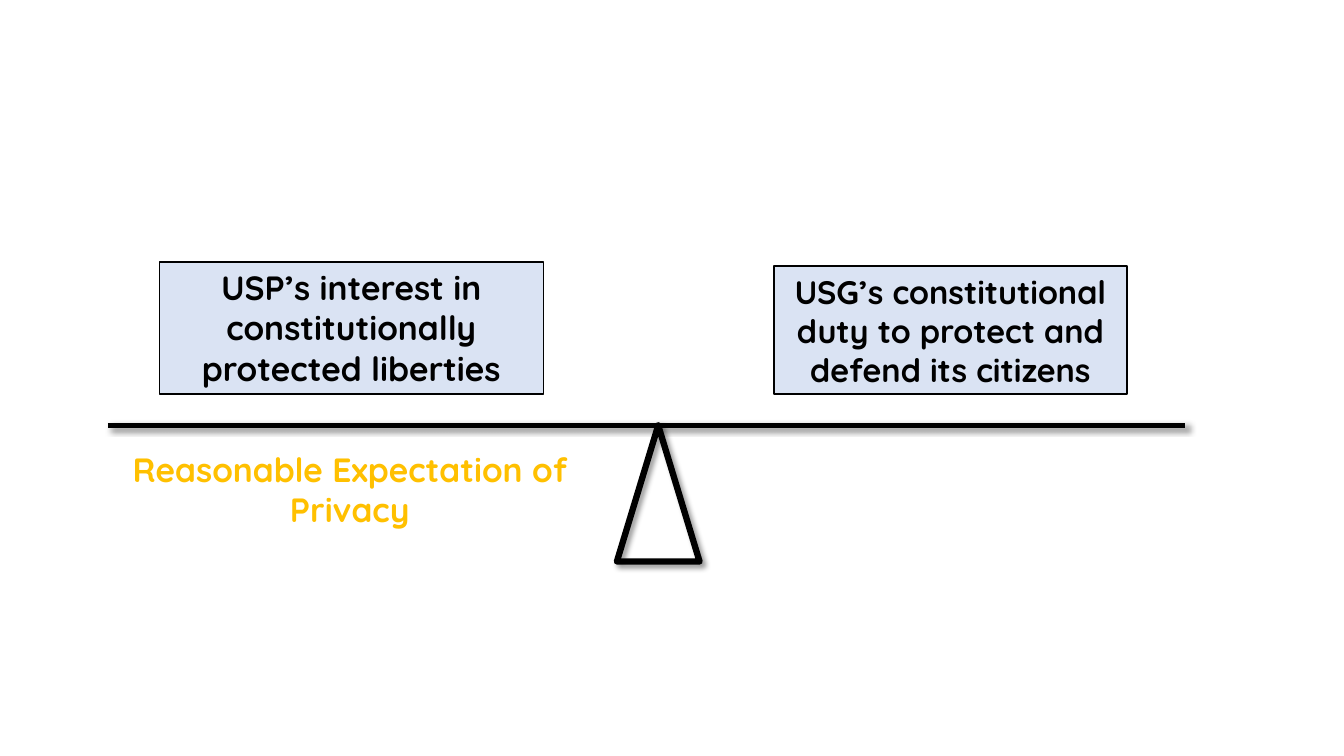
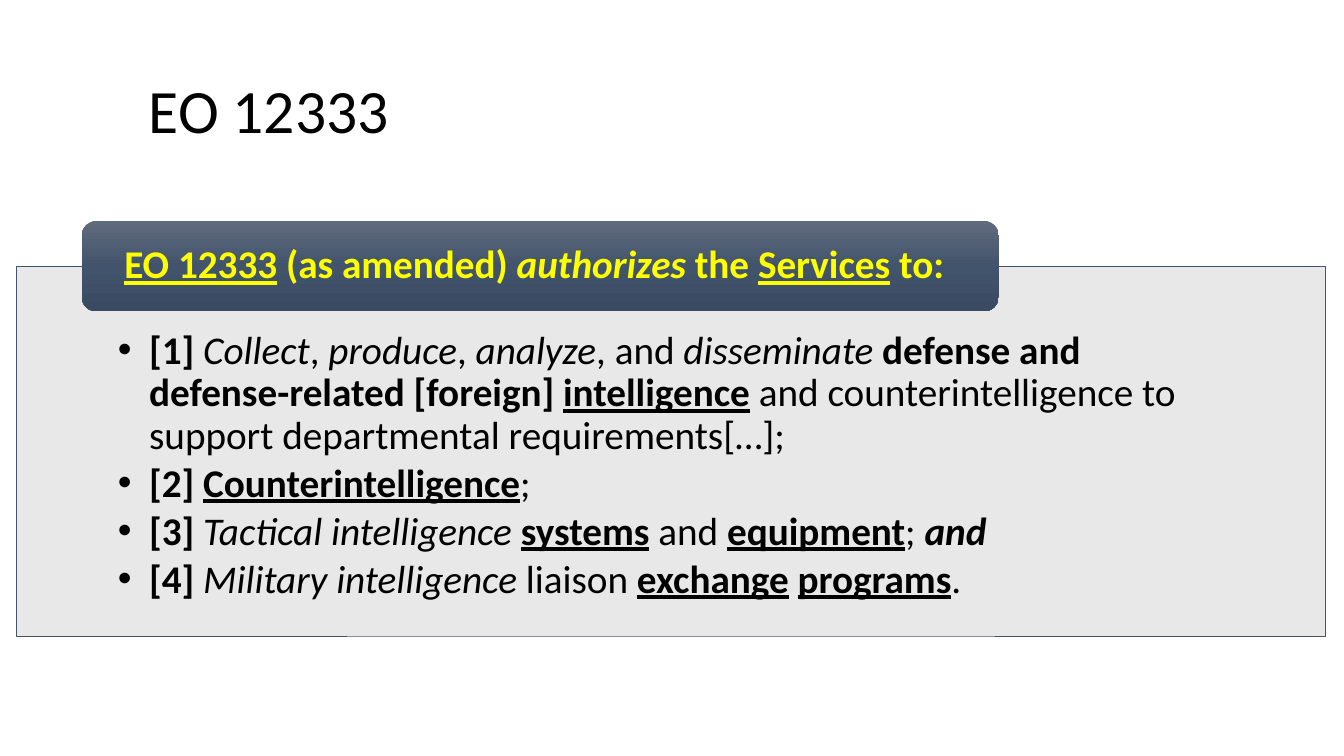
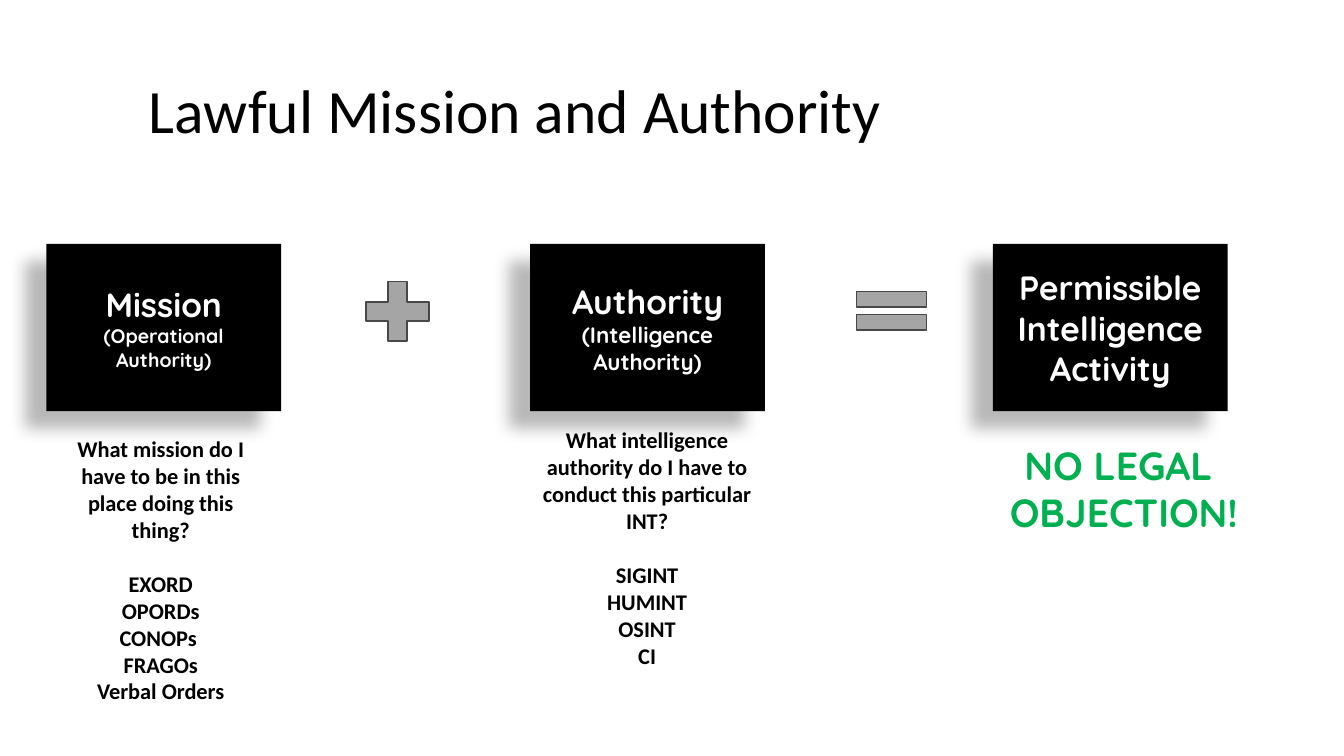
from lxml import etree
from pptx import Presentation
from pptx.dml.color import RGBColor as RGB
from pptx.enum.shapes import MSO_CONNECTOR as CONN, MSO_SHAPE as SHAPE
from pptx.enum.text import MSO_ANCHOR as ANCHOR, PP_ALIGN as ALIGN
from pptx.oxml.ns import qn
from pptx.util import Emu, Pt

PX = 9144
C = {
    "ink": "000000", "paper": "FFFFFF", "pale": "DAE3F3", "gold": "FFC000",
    "panel": "E7E6E6", "slate": "44546A", "yellow": "FFFF00", "green": "00B050",
    "sign": "A5A5A5", "sign_line": "484848",
    "band_top": "606B7D", "band_mid": "42546C", "band_low": "394A62",
}
BODY, DISPLAY = "Calibri", "Quicksand"
SOFT = (40, 4, 3, 45)
DEEP = (28, 11.8, 19.7, 141)


def px(*vals):
    return [Emu(round(v * PX)) for v in vals]


def sub(parent, tag, **attrs):
    return etree.SubElement(parent, qn(tag), {k: str(v) for k, v in attrs.items()})


def set_effects(sp, shadow=None):
    spPr = sp._element.spPr
    for old in spPr.findall(qn("a:effectLst")):
        spPr.remove(old)
    lst = sub(spPr, "a:effectLst")
    if shadow:
        alpha, blur, dist, angle = shadow
        sh = sub(lst, "a:outerShdw", blurRad=int(Pt(blur)), dist=int(Pt(dist)),
                 dir=angle * 60000, algn="ctr", rotWithShape=0)
        clr = sub(sh, "a:srgbClr", val=C["ink"])
        sub(clr, "a:alpha", val=alpha * 1000)


def set_line(line, color, width):
    line.color.rgb = RGB.from_string(C[color])
    line.width = Pt(width)


def add_shape(s, kind, box, fill=None, line=None, shadow=None):
    sp = s.shapes.add_shape(kind, *px(*box))
    if fill:
        sp.fill.solid()
        sp.fill.fore_color.rgb = RGB.from_string(C[fill])
    else:
        sp.fill.background()
    if line:
        set_line(sp.line, *line)
    else:
        sp.line.fill.background()
    sp.shadow.inherit = False
    set_effects(sp, shadow)
    return sp


def set_frame(sp, anchor=ANCHOR.TOP, ins=(10, 5, 10, 5)):
    tf = sp.text_frame
    tf.word_wrap = True
    tf.vertical_anchor = anchor
    tf.margin_left, tf.margin_top, tf.margin_right, tf.margin_bottom = px(*ins)
    return tf


def add_para(tf, runs, size, color="ink", font=BODY, align=ALIGN.CENTER,
             spacing=None, before=0, after=0):
    p = tf.paragraphs[0]
    if p.runs:
        p = tf.add_paragraph()
    p.alignment = align
    p.space_before, p.space_after = Pt(before), Pt(after)
    if spacing:
        p.line_spacing = spacing
    for text, style in runs:
        r = p.add_run()
        r.text = text
        f = r.font
        f.name, f.size = font, Pt(size)
        f.color.rgb = RGB.from_string(C[color])
        f.bold, f.italic, f.underline = ("b" in style, "i" in style, "u" in style)
    return p


def add_text(s, box, anchor=ANCHOR.TOP):
    return set_frame(s.shapes.add_textbox(*px(*box)), anchor)


def add_title(s, text):
    tf = add_text(s, (138, 40, 1060, 145), ANCHOR.MIDDLE)
    add_para(tf, [(text, "")], 44, align=ALIGN.LEFT, spacing=0.9)


def add_bullet(p, indent):
    pPr = p._p.get_or_add_pPr()
    pPr.set("marL", str(indent * PX))
    pPr.set("indent", str(-indent * PX))
    sub(pPr, "a:buFont", typeface="Arial")
    sub(pPr, "a:buChar", char="•")


def add_balance(s, x, y, w):
    beam = s.shapes.add_connector(CONN.STRAIGHT, *px(x, y, x + w, y))
    set_line(beam.line, "ink", 4)
    set_effects(beam, SOFT)
    weights = [
        ((51, -162, 381, 131), "USP’s interest in constitutionally protected liberties",
         24, ANCHOR.TOP),
        ((661, -158, 350, 127), "USG’s constitutional duty to protect and defend its citizens",
         23.2, ANCHOR.MIDDLE),
    ]
    for (dx, dy, bw, bh), text, size, anchor in weights:
        sp = add_shape(s, SHAPE.RECTANGLE, (x + dx, y + dy, bw, bh), "pale", ("ink", 1))
        add_para(set_frame(sp, anchor), [(text, "b")], size, font=DISPLAY)
    add_shape(s, SHAPE.ISOSCELES_TRIANGLE, (x + 505, y, 82, 135),
              line=("ink", 4.5), shadow=SOFT)
    tf = add_text(s, (x + 5, y + 18, 470, 91))
    add_para(tf, [("Reasonable Expectation of Privacy", "b")], 24, "gold", DISPLAY)


def add_panel(s, x, y, w, h, heading, items):
    sp = add_shape(s, SHAPE.RECTANGLE, (x, y, w, h), "panel", ("slate", 0.5))
    clr = sp._element.spPr.find(qn("a:solidFill")).find(qn("a:srgbClr"))
    sub(clr, "a:alpha", val=90000)
    tf = set_frame(sp, ins=(101, 64, 101, 22))
    for runs in items:
        p = add_para(tf, runs, 28, align=ALIGN.LEFT, spacing=0.9, after=4)
        add_bullet(p, 31)

    band = add_shape(s, SHAPE.ROUNDED_RECTANGLE, (x + 65, y - 45, 910, 90), "band_mid")
    spPr = band._element.spPr
    solid = spPr.find(qn("a:solidFill"))
    grad = etree.Element(qn("a:gradFill"), rotWithShape="1")
    stops = sub(grad, "a:gsLst")
    for pos, name in ((0, "band_top"), (50, "band_mid"), (100, "band_low")):
        sub(sub(stops, "a:gs", pos=pos * 1000), "a:srgbClr", val=C[name])
    sub(grad, "a:lin", ang=90 * 60000, scaled=0)
    spPr.replace(solid, grad)
    tf = set_frame(band, ANCHOR.MIDDLE, (38, 0, 38, 0))
    add_para(tf, heading, 28, "yellow", align=ALIGN.LEFT, spacing=0.9)


def add_term(s, x, y, name, detail=None, size=14):
    sp = add_shape(s, SHAPE.RECTANGLE, (x, y, 233, 166), "ink", shadow=DEEP)
    tf = set_frame(sp, ANCHOR.MIDDLE)
    add_para(tf, [(name, "b")], 24, "paper", DISPLAY)
    if detail:
        add_para(tf, [(detail, "b")], size, "paper", DISPLAY)


def add_question(s, box, question, sources):
    tf = add_text(s, box)
    add_para(tf, [(question, "b")], 16)
    for i, text in enumerate(sources):
        add_para(tf, [(text, "b")], 16, before=0 if i else 19.5)


def add_equation(s, x, y):
    add_term(s, x, y, "Mission", "(Operational Authority)")
    add_term(s, x + 480, y, "Authority", "(Intelligence Authority)", 16)
    add_term(s, x + 939, y, "Permissible Intelligence Activity")
    for kind, box in ((SHAPE.MATH_PLUS, (x + 306, y + 27, 85, 80)),
                      (SHAPE.MATH_EQUAL, (x + 791, y + 34, 95, 65))):
        add_shape(s, kind, box, "sign", ("sign_line", 1))
    add_question(s, (x + 2, y + 185, 223, 343),
                 "What mission do I have to be in this place doing this thing?",
                 ["EXORD", "OPORDs", "CONOPs ", "FRAGOs", "Verbal Orders"])
    add_question(s, (x + 466, y + 176, 260, 316),
                 "What intelligence authority do I have to conduct this particular INT?",
                 ["SIGINT", "HUMINT", "OSINT", "CI"])
    tf = add_text(s, (x + 939, y + 191, 260, 199))
    for text in ("NO LEGAL ", "OBJECTION!"):
        add_para(tf, [(text, "b")], 28, "green", DISPLAY)


HEADING = [("EO 12333", "bu"), (" (as amended) ", "b"), ("authorizes", "bi"),
           (" the ", "b"), ("Services", "bu"), (" to:", "b")]
ITEMS = [
    [("[1] ", "b"), ("Collect", "i"), (", ", ""), ("produce", "i"), (", ", ""),
     ("analyze", "i"), (", and ", ""), ("disseminate ", "i"),
     ("defense and defense-related [foreign] ", "b"), ("intelligence", "bu"), (" ", "b"),
     ("and counterintelligence to support departmental requirements[…];", "")],
    [("[2] ", "b"), ("Counterintelligence", "bu"), (";", "")],
    [("[3] ", "b"), ("Tactical intelligence ", "i"), ("systems", "bu"), (" and ", ""),
     ("equipment", "bu"), ("; ", ""), ("and", "bi")],
    [("[4] ", "b"), ("Military intelligence", "i"), (" liaison ", ""),
     ("exchange", "bu"), (" ", ""), ("programs", "bu"), (".", "")],
]


def main():
    prs = Presentation()
    prs.slide_width, prs.slide_height = px(1333.33, 750)
    balance, order, mission = [prs.slides.add_slide(prs.slide_layouts[6]) for _ in range(3)]
    add_balance(balance, 107, 422, 1069)
    add_title(order, "EO 12333")
    add_panel(order, 16, 264, 1299, 367, HEADING, ITEMS)
    add_title(mission, "Lawful Mission and Authority")
    add_equation(mission, 46, 242)
    prs.save("out.pptx")


if __name__ == "__main__":
    main()
